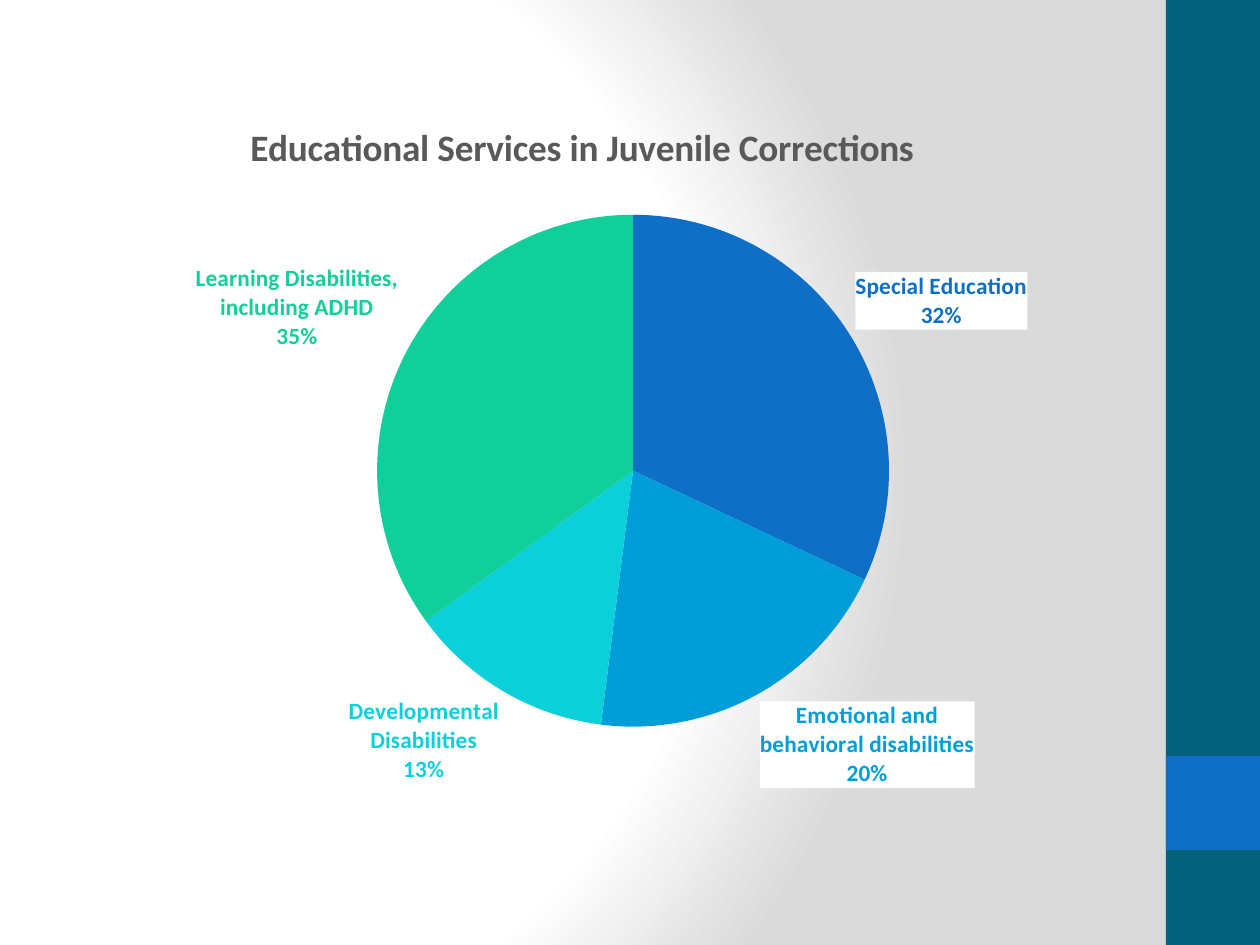
from lxml import etree
from pptx import Presentation
from pptx import util as u
from pptx.chart.data import CategoryChartData
from pptx.dml.color import RGBColor
from pptx.enum import chart as ch, shapes
from pptx.oxml import parse_xml
from pptx.oxml.ns import nsdecls, qn

PX = u.Inches(1) // 126
THEME = {
    "font": "Calibri", "title_size": 21.3, "label_size": 13.3,
    "title": "595959", "band": "04617B", "accent": "0F6FC6",
    "bg": [(0, "FFFFFF"), (75, "FFFFFF"), (100, "DADADA")],
}
TITLE = "Educational Services in Juvenile Corrections"
SLICES = [
    ("Special Education", 32, "0F6FC6"),
    ("Emotional and behavioral disabilities", 20, "009DD9"),
    ("Developmental Disabilities", 13, "0BD0D9"),
    ("Learning Disabilities, including ADHD", 35, "10CF9B"),
]


def style_font(font, size, color):
    font.name = THEME["font"]
    font.size = u.Pt(size)
    font.bold = True
    font.color.rgb = RGBColor.from_string(color)


def set_layout(parent, index, **fractions):
    """Place a chart part by fractions of the chart's size."""
    for old in parent.findall(qn("c:layout")):
        parent.remove(old)
    inner = '<c:layoutTarget val="inner"/>' if "w" in fractions else ""
    modes = '<c:xMode val="edge"/><c:yMode val="edge"/>'
    sizes = "".join(f'<c:{k} val="{v}"/>' for k, v in fractions.items())
    parent.insert(index, parse_xml(
        f'<c:layout {nsdecls("c")}><c:manualLayout>{inner}{modes}{sizes}'
        '</c:manualLayout></c:layout>'))


prs = Presentation()
prs.slide_width, prs.slide_height = 1260 * PX, 945 * PX
s = prs.slides.add_slide(prs.slide_layouts[6])

# Radial background
s.background.fill.gradient()
grad = s.element.find(".//" + qn("a:gradFill"))
stops = "".join(f'<a:gs pos="{pos * 1000}"><a:srgbClr val="{color}"/></a:gs>'
                for pos, color in THEME["bg"])
grad.getparent().replace(grad, parse_xml(
    f'<a:gradFill {nsdecls("a")} rotWithShape="1"><a:gsLst>{stops}</a:gsLst>'
    '<a:path path="circle"><a:fillToRect l="20000" t="50000" r="100000" b="50000"/>'
    '</a:path></a:gradFill>'))

# Side band and its accent square
for top, height, color in [(0, 945, THEME["band"]), (756, 94, THEME["accent"])]:
    sp = s.shapes.add_shape(shapes.MSO_SHAPE.RECTANGLE,
                            1166 * PX, top * PX, 94 * PX, height * PX)
    sp.shadow.inherit = False
    sp.fill.solid()
    sp.fill.fore_color.rgb = RGBColor.from_string(color)
    sp.line.fill.background()

# Pie chart
data = CategoryChartData()
data.categories = [name for name, _, _ in SLICES]
data.add_series(TITLE, [value for _, value, _ in SLICES])
chart = s.shapes.add_chart(ch.XL_CHART_TYPE.PIE, 21 * PX, 84 * PX,
                           1113 * PX, 766 * PX, data).chart
chart.has_legend = False
chart.font.name = THEME["font"]
chart.font.size = u.Pt(10)
chart.element.find(qn("c:txPr")).addprevious(parse_xml(
    f'<c:spPr {nsdecls("c", "a")}><a:noFill/><a:ln><a:noFill/></a:ln></c:spPr>'))

chart.has_title = True
tf = chart.chart_title.text_frame
tf.text = TITLE
style_font(tf.paragraphs[0].runs[0].font, THEME["title_size"], THEME["title"])
chart.chart_title.include_in_layout = False
set_layout(chart.element.find(".//" + qn("c:title")), 1, x=0.2, y=0.04)
set_layout(chart.element.find(".//" + qn("c:plotArea")), 0,
           x=0.32, y=0.17, w=0.46, h=0.67)

plot = chart.plots[0]
plot.vary_by_categories = True
series = plot.series[0]
labels = series.data_labels
labels.show_value = False
labels.show_category_name = True
labels.show_percentage = True
labels.position = ch.XL_LABEL_POSITION.OUTSIDE_END

for i, (_, _, color) in enumerate(SLICES):
    point = series.points[i]
    point.format.fill.solid()
    point.format.fill.fore_color.rgb = RGBColor.from_string(color)
    point.format.line.fill.background()
    style_font(point.data_label.font, THEME["label_size"], color)
    point.data_label.position = ch.XL_LABEL_POSITION.OUTSIDE_END

# Category and percentage on separate lines, over white
for label in chart.element.iter(qn("c:dLbl")):
    for tag, shown in [("showVal", 0), ("showCatName", 1), ("showPercent", 1)]:
        label.find(qn(f"c:{tag}")).set("val", str(shown))
    label.find(qn("c:txPr")).addprevious(parse_xml(
        f'<c:spPr {nsdecls("c", "a")}><a:solidFill><a:srgbClr val="FFFFFF"/>'
        '</a:solidFill><a:ln><a:noFill/></a:ln></c:spPr>'))
    for old in label.findall(qn("c:spPr"))[:-1]:
        label.remove(old)
    etree.SubElement(label, qn("c:separator")).text = "\n"

prs.save("out.pptx")
